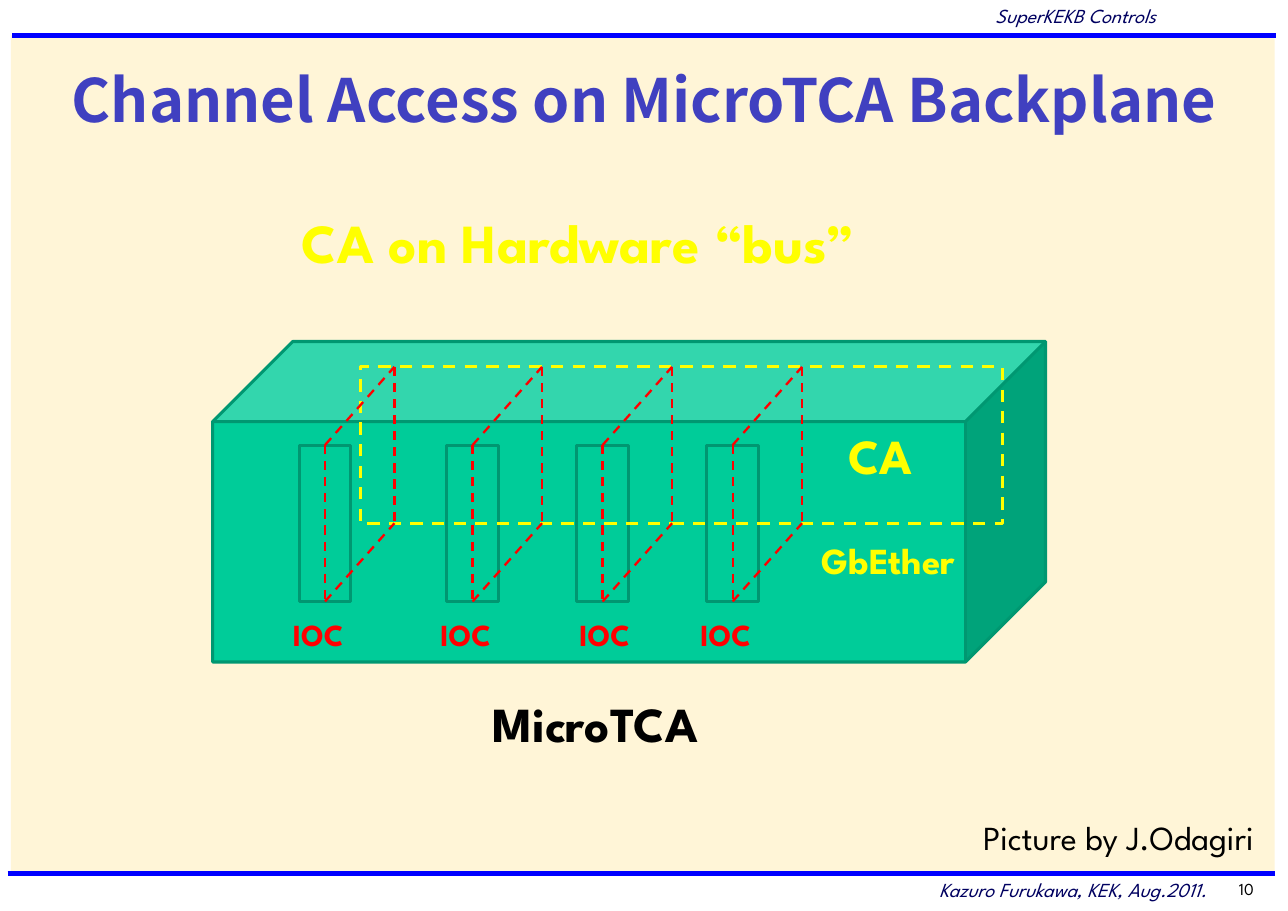
"""Build the slide on Channel Access over a MicroTCA backplane."""
from lxml import etree
from pptx import Presentation
from pptx.dml.color import RGBColor
from pptx.enum.dml import MSO_LINE
from pptx.enum.shapes import MSO_CONNECTOR, MSO_SHAPE
from pptx.enum.text import MSO_ANCHOR, PP_ALIGN
from pptx.oxml.ns import qn
from pptx.util import Inches, Pt

RECT, CUBE = MSO_SHAPE.RECTANGLE, MSO_SHAPE.CUBE
STRAIGHT = MSO_CONNECTOR.STRAIGHT
DASH = MSO_LINE.DASH
TOP, MIDDLE = MSO_ANCHOR.TOP, MSO_ANCHOR.MIDDLE
LEFT, CENTER, RIGHT = PP_ALIGN.LEFT, PP_ALIGN.CENTER, PP_ALIGN.RIGHT

FONT, TITLE_FONT = "League Spartan", "Noto Sans CJK JP"
CREAM, BLUE, NAVY, TITLE_BLUE = "FFF5D7", "0000FF", "000060", "4040C0"
GREEN, DARK_GREEN = "00CC99", "009771"
YELLOW, RED, BLACK = "FFFF00", "FF0000", "000000"


def rgb(color):
    return RGBColor.from_string(color)


class Canvas:
    """Hold the slide and its style, and add elements to it."""

    def __init__(self, slide, font):
        self.shapes = slide.shapes
        self.font = font

    def outline(self, line, color, width, dash=None):
        line.color.rgb = rgb(color)
        line.width = Pt(width)
        if dash:
            line.dash_style = dash

    def shape(self, kind, x, y, w, h, fill=None, line=None, dash=None):
        sp = self.shapes.add_shape(kind, Inches(x), Inches(y), Inches(w), Inches(h))
        sp.shadow.inherit = False
        if fill:
            sp.fill.solid()
            sp.fill.fore_color.rgb = rgb(fill)
        else:
            sp.fill.background()
        if line:
            self.outline(sp.line, line, 2, dash)
        else:
            sp.line.fill.background()

    def line(self, start, end, color, width, dash=None):
        cxn = self.shapes.add_connector(
            STRAIGHT, *(Inches(v) for v in (*start, *end)))
        self.outline(cxn.line, color, width, dash)
        etree.SubElement(cxn._element.spPr, qn("a:effectLst"))

    def text(self, text, x, y, w, h, size, color, bold=False, italic=False,
             align=LEFT, anchor=TOP, font=None, inset=0.1):
        sp = self.shapes.add_textbox(Inches(x), Inches(y), Inches(w), Inches(h))
        tf = sp.text_frame
        tf.word_wrap = True
        tf.vertical_anchor = anchor
        tf.margin_left = tf.margin_right = Inches(inset)
        p = tf.paragraphs[0]
        p.alignment = align
        r = p.add_run()
        r.text = text
        r.font.name = font or self.font
        r.font.size = Pt(size)
        r.font.bold = bold
        r.font.italic = italic
        r.font.color.rgb = rgb(color)


def add_frame(c):
    c.shape(RECT, 0.1, 0.32, 11.47, 7.62, CREAM)
    c.line((0.11, 0.32), (11.58, 0.32), BLUE, 3)
    c.line((0.07, 7.93), (11.57, 7.93), BLUE, 3)
    note = dict(size=13, color=NAVY, italic=True, align=RIGHT, inset=0.11)
    c.text("Kazuro Furukawa, KEK, Aug.2011.", 7.85, 7.92, 3.21, 0.33, **note)
    c.text("SuperKEKB Controls", 7.85, -0.02, 2.75, 0.33, **note)
    c.text("Channel Access on MicroTCA Backplane", 0.18, 0.51, 11.33, 0.78, 39,
           TITLE_BLUE, bold=True, align=CENTER, anchor=MIDDLE, font=TITLE_FONT,
           inset=0.11)
    c.text("10", 10.81, 7.93, 0.68, 0.28, 11, BLACK, align=RIGHT, inset=0.11)


def add_crate(c):
    card_x = (2.95, 4.29, 5.47, 6.65)
    label_x = (2.56, 3.9, 5.16, 6.26)
    front_y, back_y, height = 4.04, 3.33, 1.42
    depth, slot_w = 0.63, 0.47

    c.shape(CUBE, 1.93, 3.1, 7.56, 2.91, GREEN, DARK_GREEN)
    for x in card_x:
        c.shape(RECT, x - slot_w / 2, front_y, slot_w, height, GREEN, DARK_GREEN)
    c.shape(RECT, 3.27, back_y, 5.83, height, line=YELLOW, dash=DASH)
    for x, label in zip(card_x, label_x):
        front_top, front_bottom = (x, front_y), (x, front_y + height)
        back_top, back_bottom = (x + depth, back_y), (x + depth, back_y + height)
        for start, end in ((front_top, back_top), (front_bottom, back_bottom),
                           (front_top, front_bottom), (back_top, back_bottom)):
            c.line(start, end, RED, 1.5, DASH)
        c.text("IOC", label, 5.54, 0.87, 0.44, 20, RED, bold=True)


def add_labels(c):
    c.text("CA", 7.6, 3.81, 1.1, 0.64, 32, YELLOW, bold=True)
    c.text("CA on Hardware “bus”", 2.64, 1.84, 7.01, 0.71, 36, YELLOW, bold=True)
    c.text("GbEther", 7.36, 4.83, 1.73, 0.51, 24, YELLOW, bold=True)
    c.text("MicroTCA", 4.37, 6.25, 2.83, 0.64, 32, BLACK, bold=True)
    c.text("Picture by J.Odagiri", 8.35, 7.39, 3.14, 0.42, 22, BLACK,
           align=RIGHT, anchor=MIDDLE, inset=0.11)


def main():
    prs = Presentation()
    prs.slide_width, prs.slide_height = Inches(11.69), Inches(8.27)
    c = Canvas(prs.slides.add_slide(prs.slide_layouts[6]), FONT)
    add_frame(c)
    add_crate(c)
    add_labels(c)
    prs.save("out.pptx")


if __name__ == "__main__":
    main()
